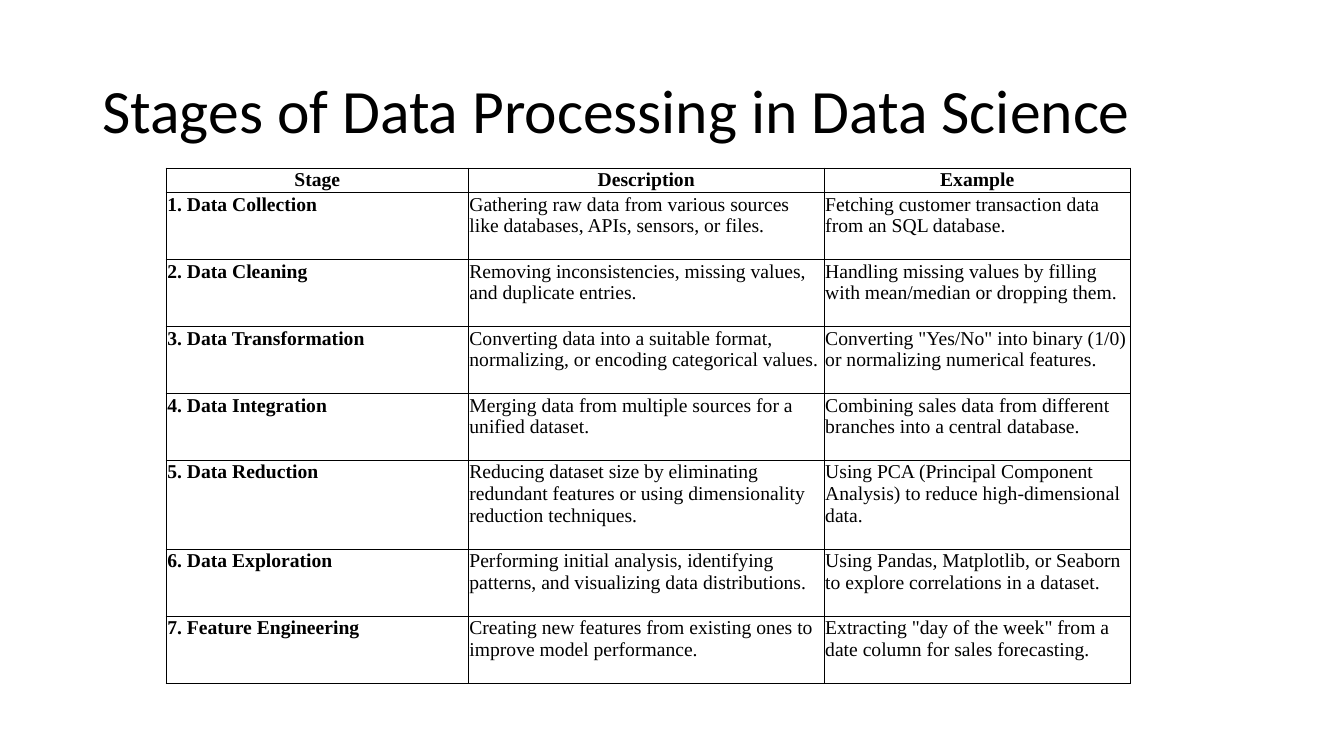
"""Build a slide with a table of the stages of data processing."""
from dataclasses import dataclass

import lxml.etree
import pptx
import pptx.dml.color
import pptx.enum.text
import pptx.oxml.ns
import pptx.presentation
import pptx.slide
import pptx.table
import pptx.text.text
import pptx.util

Pt = pptx.util.Pt


@dataclass(frozen=True)
class Theme:
    ink: str = "000000"
    paper: str = "FFFFFF"
    title_font: str = "Calibri"
    table_font: str = "Times New Roman"
    title_size: float = 44
    table_size: float = 14
    border_width: float = 1
    cell_inset: float = 0.72


@dataclass(frozen=True)
class Stage:
    name: str
    description: str
    example: str
    height: float = 47.8


THEME = Theme()
TITLE = "Stages of Data Processing in Data Science"
COLUMN_WIDTHS = (215.8, 254.2, 218.6)
HEADER = Stage("Stage", "Description", "Example", 16.1)
STAGES = (
    Stage("1. Data Collection",
          "Gathering raw data from various sources like databases, APIs, sensors, or files.",
          "Fetching customer transaction data from an SQL database."),
    Stage("2. Data Cleaning",
          "Removing inconsistencies, missing values, and duplicate entries.",
          "Handling missing values by filling with mean/median or dropping them."),
    Stage("3. Data Transformation",
          "Converting data into a suitable format, normalizing, or encoding categorical values.",
          'Converting "Yes/No" into binary (1/0) or normalizing numerical features.'),
    Stage("4. Data Integration",
          "Merging data from multiple sources for a unified dataset.",
          "Combining sales data from different branches into a central database."),
    Stage("5. Data Reduction",
          "Reducing dataset size by eliminating redundant features or using dimensionality "
          "reduction techniques.",
          "Using PCA (Principal Component Analysis) to reduce high-dimensional data.", 63.6),
    Stage("6. Data Exploration",
          "Performing initial analysis, identifying patterns, and visualizing data distributions.",
          "Using Pandas, Matplotlib, or Seaborn to explore correlations in a dataset."),
    Stage("7. Feature Engineering",
          "Creating new features from existing ones to improve model performance.",
          'Extracting "day of the week" from a date column for sales forecasting.'),
)


def add_span(para: pptx.text.text._Paragraph, text: str, font: str, size: float,
             bold: bool = False) -> None:
    """Add one formatted run to a paragraph."""
    span = para.add_run()
    span.text = text
    span.font.name = font
    span.font.size = Pt(size)
    span.font.bold = bold
    span.font.color.rgb = pptx.dml.color.RGBColor.from_string(THEME.ink)


def add_title(page: pptx.slide.Slide) -> None:
    """Add the slide title."""
    box = page.shapes.add_textbox(Pt(66), Pt(28.8), Pt(828), Pt(104.4))
    frame = box.text_frame
    frame.word_wrap = True
    frame.vertical_anchor = pptx.enum.text.MSO_ANCHOR.MIDDLE
    para = frame.paragraphs[0]
    para.line_spacing = 0.9
    add_span(para, TITLE, THEME.title_font, THEME.title_size)


def add_borders(cell: pptx.table._Cell) -> None:
    """Draw a solid line on all four sides of a cell."""
    qn = pptx.oxml.ns.qn
    properties = cell._tc.get_or_add_tcPr()
    for side in ("a:lnL", "a:lnR", "a:lnT", "a:lnB"):
        line = lxml.etree.SubElement(properties, qn(side), w=str(Pt(THEME.border_width)))
        fill = lxml.etree.SubElement(line, qn("a:solidFill"))
        lxml.etree.SubElement(fill, qn("a:srgbClr"), val=THEME.ink)


def fill_cell(cell: pptx.table._Cell, text: str, is_header: bool, bold: bool) -> None:
    """Format a cell and write its text."""
    add_borders(cell)
    cell.fill.background()
    cell.margin_left = cell.margin_right = cell.margin_top = Pt(THEME.cell_inset)
    cell.margin_bottom = Pt(0)
    para = cell.text_frame.paragraphs[0]
    alignments = pptx.enum.text.PP_ALIGN
    para.alignment = alignments.CENTER if is_header else alignments.LEFT
    add_span(para, text, THEME.table_font, THEME.table_size, bold)


def add_stage_table(page: pptx.slide.Slide) -> None:
    """Add the table with its header and one row per stage."""
    rows = (HEADER, *STAGES)
    table = page.shapes.add_table(
        len(rows), len(COLUMN_WIDTHS), Pt(118.8), Pt(120.2),
        Pt(sum(COLUMN_WIDTHS)), Pt(sum(row.height for row in rows))).table
    table.first_row = table.horz_banding = False
    for column, width in zip(table.columns, COLUMN_WIDTHS):
        column.width = Pt(width)
    for row_index, row in enumerate(rows):
        table.rows[row_index].height = Pt(row.height)
        is_header = row is HEADER
        for column_index, text in enumerate((row.name, row.description, row.example)):
            fill_cell(table.cell(row_index, column_index), text,
                      is_header, is_header or column_index == 0)


def main() -> None:
    """Build and save the deck."""
    deck = pptx.Presentation()
    deck.slide_width, deck.slide_height = Pt(960), Pt(540)
    page = deck.slides.add_slide(deck.slide_layouts[6])
    page.background.fill.solid()
    page.background.fill.fore_color.rgb = pptx.dml.color.RGBColor.from_string(THEME.paper)
    add_title(page)
    add_stage_table(page)
    deck.save("out.pptx")


if __name__ == "__main__":
    main()
